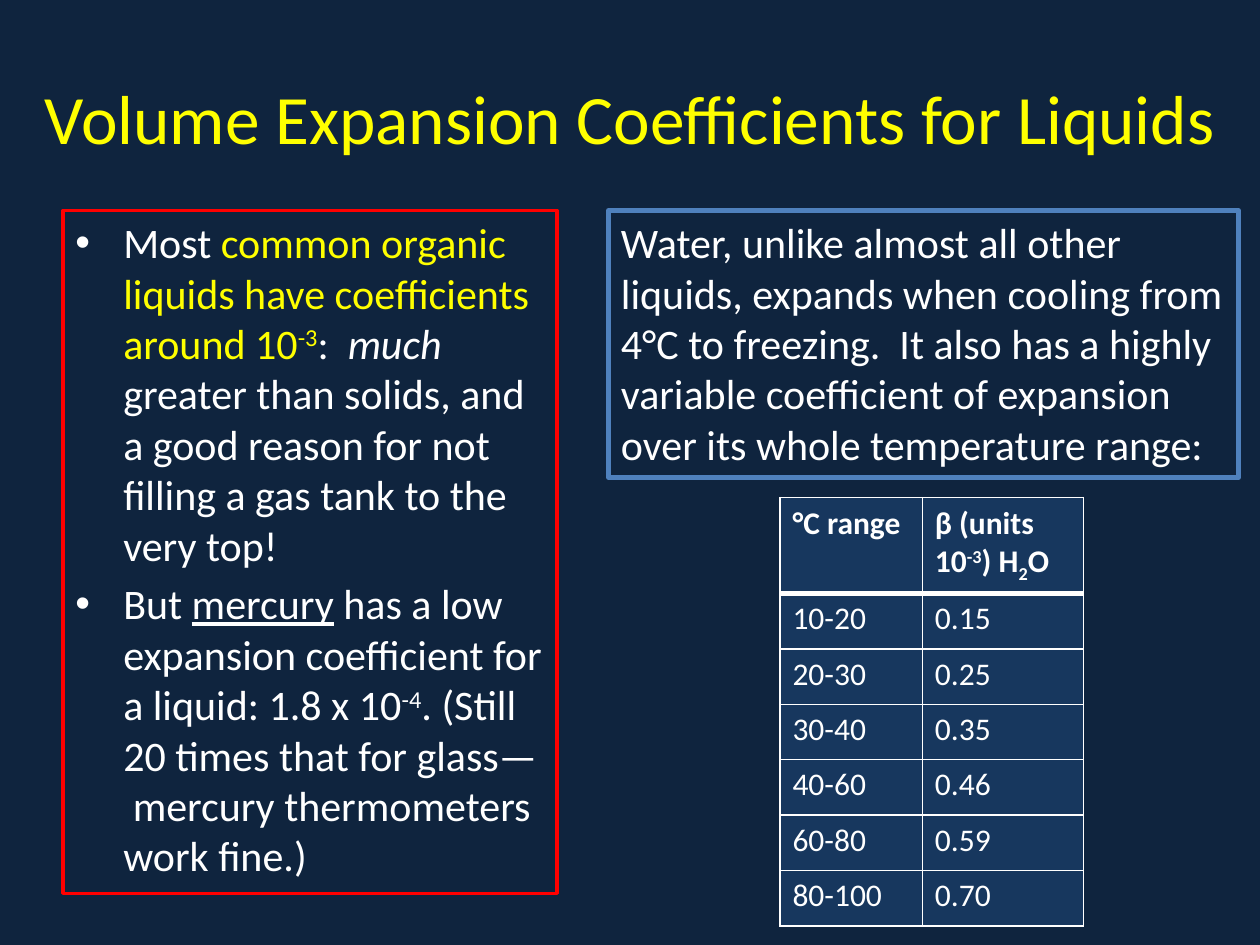
"""Builds the slide on volume expansion coefficients for liquids."""
from lxml import etree
from pptx import Presentation
from pptx.dml.color import RGBColor
from pptx.enum.shapes import MSO_SHAPE
from pptx.enum.text import MSO_ANCHOR, MSO_AUTO_SIZE, PP_ALIGN
from pptx.oxml.ns import qn
from pptx.util import Inches, Pt

RECT = MSO_SHAPE.RECTANGLE
TOP, MIDDLE = MSO_ANCHOR.TOP, MSO_ANCHOR.MIDDLE
LEFT, CENTER = PP_ALIGN.LEFT, PP_ALIGN.CENTER
NO_FIT = MSO_AUTO_SIZE.NONE
WHITE, YELLOW, NAVY, CELL_BLUE = "FFFFFF", "FFFF00", "0F243E", "17375E"


def rgb(value):
    return RGBColor.from_string(value)


def add_runs(p, runs, size, **common):
    for text, own in runs:
        r = p.add_run()
        r.text = text
        style = {"name": "Calibri", "size": Pt(size), "color": WHITE, **common, **own}
        for key, value in style.items():
            if key == "color":
                r.font.color.rgb = rgb(value)
            elif key == "baseline":
                r.font._element.set("baseline", str(value * 1000))
            else:
                setattr(r.font, key, value)


prs = Presentation()
prs.slide_width, prs.slide_height = Inches(10), Inches(7.5)
s = prs.slides.add_slide(prs.slide_layouts[5])
s.background.fill.solid()
s.background.fill.fore_color.rgb = rgb(NAVY)

title = s.shapes.title
title.left, title.top, title.width, title.height = map(Inches, (0, 0.3, 10, 1.25))
tf = title.text_frame
tf.word_wrap, tf.auto_size, tf.vertical_anchor = True, NO_FIT, MIDDLE
tf.paragraphs[0].alignment = CENTER
add_runs(tf.paragraphs[0], [("Volume Expansion Coefficients for Liquids", {})], 39.6, color=YELLOW)

sup, sub = {"baseline": 30}, {"baseline": -25}
organic = [
    ("Most ", {}),
    ("common organic liquids have coefficients around 10", {"color": YELLOW}),
    ("-3", {"color": YELLOW, **sup}),
    (":  ", {}),
    ("much", {"italic": True}),
    (" greater than solids, and a good reason for not filling a gas tank to the very top!", {}),
]
mercury = [
    ("But ", {}),
    ("mercury", {"underline": True}),
    (" has a low expansion coefficient for a liquid: 1.8 x 10", {}),
    ("-4", sup),
    (". (Still 20 times that for glass—  mercury thermometers work fine.)", {}),
]
water = [("Water, unlike almost all other liquids, expands when cooling from 4°C to freezing.  "
          "It also has a highly variable coefficient of expansion over its whole temperature range:", {})]

boxes = [
    ((0.5, 1.67, 3.92, 5.42), "FF0000", 2, [organic, mercury], True),
    ((4.83, 1.67, 5, 2.12), "4F81BD", 2.75, [water], False),
]
for place, color, weight, paragraphs, bulleted in boxes:
    sp = s.shapes.add_shape(RECT, *map(Inches, place))
    sp.shadow.inherit = False
    sp.fill.background()
    sp.line.color.rgb = rgb(color)
    sp.line.width = Pt(weight)
    tf = sp.text_frame
    tf.word_wrap, tf.vertical_anchor = True, TOP
    for i, runs in enumerate(paragraphs):
        p = tf.add_paragraph() if i else tf.paragraphs[0]
        p.alignment = LEFT
        add_runs(p, runs, 24)
        if bulleted:
            p.space_before = Pt(4.8)
            pPr = p._p.get_or_add_pPr()
            pPr.set("marL", str(Inches(0.38)))
            pPr.set("indent", str(-Inches(0.38)))
            etree.SubElement(pPr, qn("a:buFont")).set("typeface", "Arial")
            etree.SubElement(pPr, qn("a:buChar")).set("char", "•")

heading = [("β (units 10", {}), ("-3", sup), (") H", {}), ("2", sub), ("O", {})]
values = [("10-20", "0.15"), ("20-30", "0.25"), ("30-40", "0.35"),
          ("40-60", "0.46"), ("60-80", "0.59"), ("80-100", "0.70")]
rows = [([("°C range", {})], heading)]
rows += [([(span, {})], [(beta, {})]) for span, beta in values]

frame = s.shapes.add_table(len(rows), 2, *map(Inches, (6.19, 3.95, 2.41, 3.4)))
table = frame.table
for column, width in zip(table.columns, (1.13, 1.28)):
    column.width = Inches(width)
for i, row in enumerate(rows):
    table.rows[i].height = Inches(0.44 if i else 0.76)
    for j, runs in enumerate(row):
        cell = table.cell(i, j)
        add_runs(cell.text_frame.paragraphs[0], runs, 18, bold=i == 0)
        tcPr = cell._tc.get_or_add_tcPr()
        for side in "LRTB":
            thick = (i, side) in ((0, "B"), (1, "T"))
            ln = etree.SubElement(tcPr, qn(f"a:ln{side}"), w=str(Pt(3 if thick else 1)))
            fill = etree.SubElement(ln, qn("a:solidFill"))
            etree.SubElement(fill, qn("a:srgbClr"), val=WHITE)
        cell.fill.solid()
        cell.fill.fore_color.rgb = rgb(CELL_BLUE)

prs.save("out.pptx")
